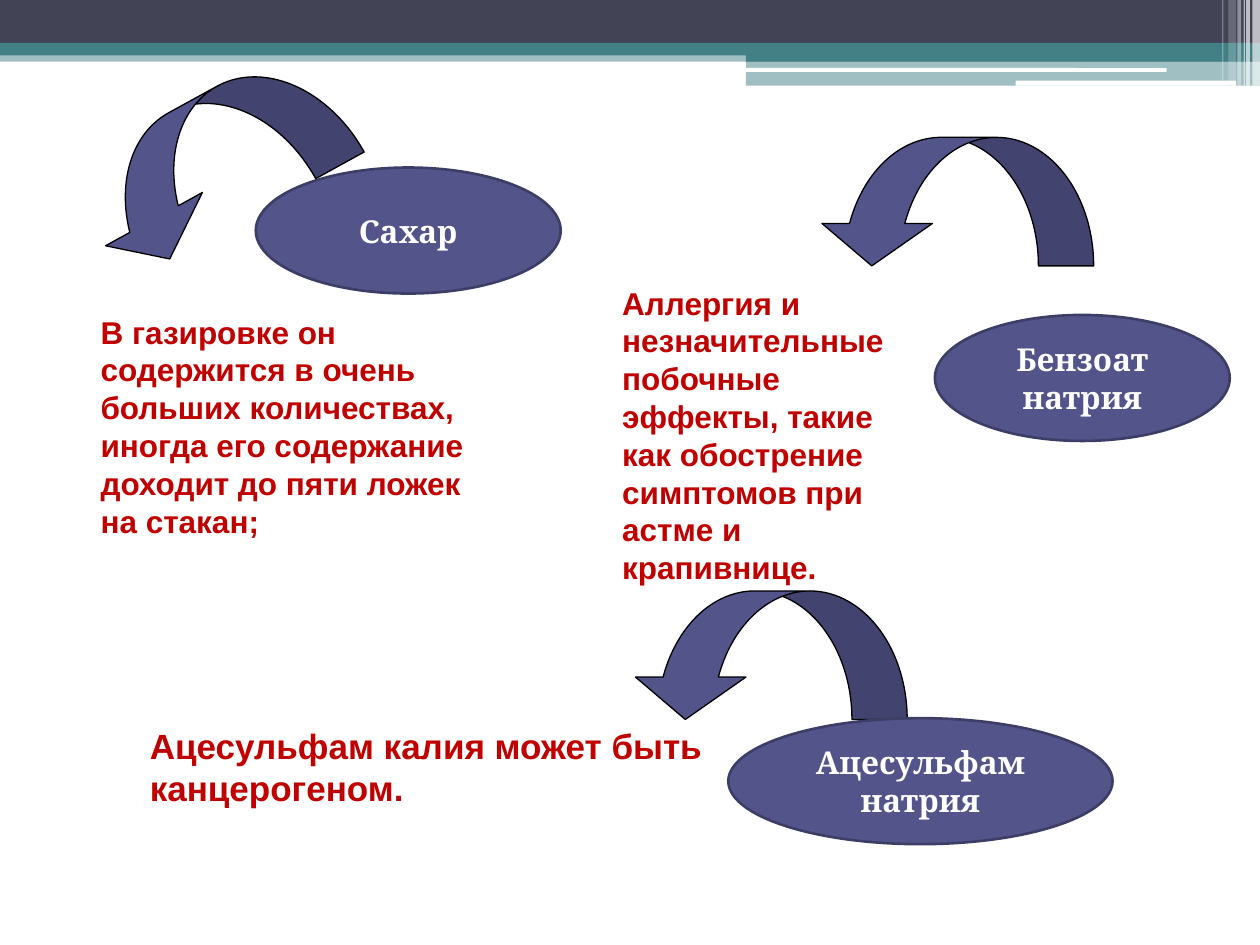
import dataclasses

import lxml.etree
import pptx
import pptx.dml.color
import pptx.enum.shapes
import pptx.enum.text
import pptx.oxml.ns
import pptx.util

SHAPES = pptx.enum.shapes.MSO_SHAPE
CELL = 0.1
COLUMNS, ROWS = 100, 75


@dataclasses.dataclass(frozen=True)
class Theme:
    dark: str = "424456"
    teal: str = "438086"
    white: str = "FFFFFF"
    violet: str = "53548A"
    violet_edge: str = "3D3E66"
    black: str = "000000"
    red: str = "C00000"
    label_font: str = "Cambria"
    body_font: str = "Arial"
    text_size: int = 18
    large_size: int = 20


THEME = Theme()


def cells(*counts):
    return [pptx.util.Inches(count * CELL) for count in counts]


def color(value):
    return pptx.dml.color.RGBColor.from_string(value)


def add_filled(slide, kind, box, fill, opacity=100, line=None, width=0):
    shape = slide.shapes.add_shape(kind, *cells(*box))
    shape.shadow.inherit = False
    shape.fill.solid()
    shape.fill.fore_color.rgb = color(fill)
    if opacity < 100:
        tag = pptx.oxml.ns.qn("a:srgbClr")
        fill_color = next(shape.fill._xPr.iter(tag))
        alpha = lxml.etree.SubElement(fill_color, pptx.oxml.ns.qn("a:alpha"))
        alpha.set("val", str(opacity * 1000))
    if line:
        shape.line.color.rgb = color(line)
        shape.line.width = pptx.util.Pt(width)
    else:
        shape.line.fill.background()
    return shape


def set_text(shape, text, font, size, text_color, alignment):
    frame = shape.text_frame
    frame.text = text
    frame.word_wrap = True
    frame.vertical_anchor = pptx.enum.text.MSO_ANCHOR.MIDDLE
    for paragraph in frame.paragraphs:
        paragraph.alignment = alignment
        for run in paragraph.runs:
            run.font.name = font
            run.font.size = pptx.util.Pt(size)
            run.font.bold = True
            run.font.color.rgb = color(text_color)


def add_header(slide):
    bands = [
        (0, 4, COLUMNS, 0.9, THEME.teal, 50),
        (0, 0, COLUMNS, 3.4, THEME.dark, 100),
        (0, 3.4, COLUMNS, 1, THEME.teal, 100),
        (59.2, 3.9, 40.8, 1, THEME.teal, 100),
        (59.2, 4.8, 40.8, 2, THEME.teal, 50),
    ]
    for *box, fill, opacity in bands:
        add_filled(slide, SHAPES.RECTANGLE, box, fill, opacity)
    for box in [(59.1, 5.4, 33.5, 0.3), (80.6, 6.4, 17.5, 0.4)]:
        add_filled(slide, SHAPES.ROUNDED_RECTANGLE, box, THEME.white)
    stripes = [
        (99.4, 0.6, 6.8, 65),
        (98.9, 0.3, 6.8, 65),
        (98.7, 0.1, 6.8, 60),
        (98.2, 0.3, 6.8, 40),
        (97.5, 0.6, 6.4, 20),
        (97, 0.1, 6.4, 30),
    ]
    for left, width, height, opacity in stripes:
        box = (left, 0, width, height)
        add_filled(slide, SHAPES.RECTANGLE, box, THEME.white, opacity)


def add_curved_arrow(slide, left, top, rotation=90):
    arrow = add_filled(slide, SHAPES.CURVED_RIGHT_ARROW, (left, top, 10.2, 22),
                       THEME.violet, line=THEME.black, width=0.75)
    arrow.rotation = rotation
    for index, value in enumerate((0.43, 0.86, 0.33)):
        arrow.adjustments[index] = value


def add_additive(slide, text, left, top, width):
    ellipse = add_filled(slide, SHAPES.OVAL, (left, top, width, 10),
                         THEME.violet, line=THEME.violet_edge, width=1.5)
    set_text(ellipse, text, THEME.label_font, THEME.text_size, THEME.white,
             pptx.enum.text.PP_ALIGN.CENTER)


def add_effect(slide, text, box, size=THEME.text_size):
    text_box = slide.shapes.add_textbox(*cells(*box))
    set_text(text_box, text, THEME.body_font, size, THEME.red,
             pptx.enum.text.PP_ALIGN.LEFT)
    text_box.text_frame.auto_size = pptx.enum.text.MSO_AUTO_SIZE.SHAPE_TO_FIT_TEXT


def main():
    presentation = pptx.Presentation()
    presentation.slide_width, presentation.slide_height = cells(COLUMNS, ROWS)
    slide = presentation.slides.add_slide(presentation.slide_layouts[6])

    add_header(slide)

    add_curved_arrow(slide, 70.7, 5)
    add_curved_arrow(slide, 11.7, 1.9, rotation=61.2)
    add_curved_arrow(slide, 55.9, 41)

    add_additive(slide, "Сахар", 20.3, 13.3, 24.2)
    add_additive(slide, "Бензоат натрия", 74.2, 25, 23.4)
    add_additive(slide, "Ацесульфам натрия", 57.8, 57, 30.5)

    add_effect(slide, "Ацесульфам калия может быть канцерогеном.",
               (10.9, 57, 46.9, 7.7), THEME.large_size)
    add_effect(slide, "Аллергия и незначительные побочные эффекты, такие как "
               "обострение симптомов при астме и крапивнице.",
               (48.4, 21.9, 23.4, 25.2))
    add_effect(slide, "В газировке он содержится в очень больших количествах, "
               "иногда его содержание доходит до пяти ложек на стакан;",
               (7, 24.2, 32, 19.2))

    presentation.save("out.pptx")


if __name__ == "__main__":
    main()
